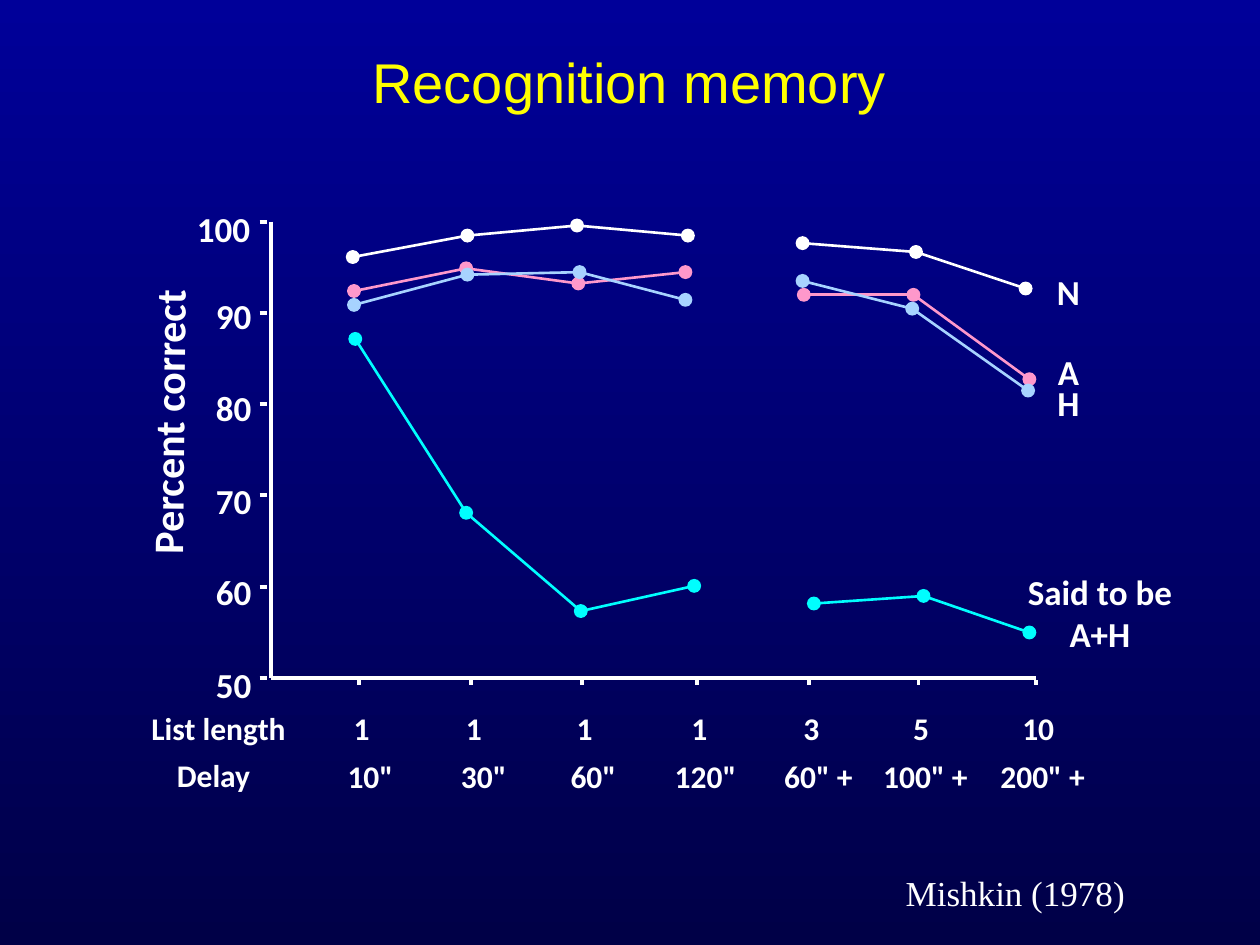
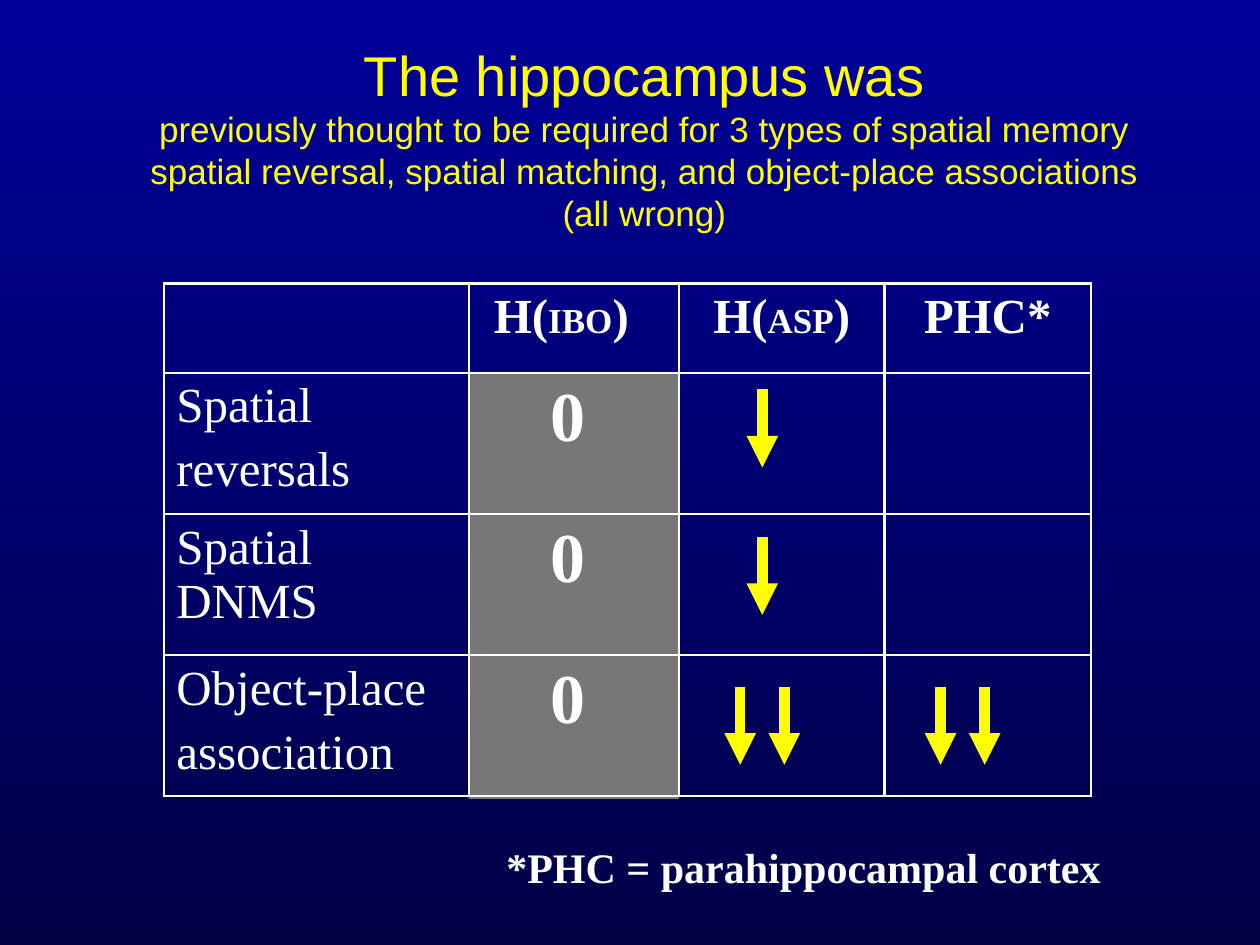
from dataclasses import dataclass, replace
from itertools import pairwise

from lxml import etree
from pptx import Presentation
from pptx.dml.color import RGBColor
from pptx.enum.shapes import MSO_CONNECTOR, MSO_SHAPE
from pptx.enum.text import MSO_ANCHOR, MSO_AUTO_SIZE, PP_ALIGN
from pptx.oxml.ns import qn
from pptx.util import Inches, Pt

STRAIGHT = MSO_CONNECTOR.STRAIGHT
OVAL, RECTANGLE = MSO_SHAPE.OVAL, MSO_SHAPE.RECTANGLE
LEFT, CENTER = PP_ALIGN.LEFT, PP_ALIGN.CENTER
TOP, MIDDLE = MSO_ANCHOR.TOP, MSO_ANCHOR.MIDDLE
FIT_TEXT, FIXED_SIZE = MSO_AUTO_SIZE.SHAPE_TO_FIT_TEXT, MSO_AUTO_SIZE.NONE

WHITE, YELLOW, GREY = "FFFFFF", "FFFF00", "777777"
PINK, PALE_BLUE, CYAN = "FE98CB", "A7D3FF", "00FEFE"
BACKGROUND = ("000099", "000047")


@dataclass(frozen=True)
class Style:
    font: str
    size: float
    color: str = WHITE
    bold: bool = False


TITLE = Style("Arial", 32, YELLOW)
SUBTITLE = replace(TITLE, size=20)
AXIS_TITLE = Style("Calibri", 24, bold=True)
SCALE = replace(AXIS_TITLE, size=20)
CONDITION = replace(AXIS_TITLE, size=18)
CITATION = Style("Times New Roman", 20)
TASK = replace(CITATION, size=28)
HEADING = replace(TASK, bold=True)
SUBHEADING = replace(HEADING, size=20)
FOOTNOTE = replace(HEADING, size=24)
SCORE = replace(HEADING, size=40)


@dataclass(frozen=True)
class Box:
    left: float
    top: float
    width: float
    height: float

    def lengths(self) -> tuple:
        return tuple(Inches(v) for v in (self.left, self.top, self.width, self.height))


@dataclass(frozen=True)
class Trial:
    tick: float
    list_length: str
    delay: str
    delay_left: float
    delay_width: float


@dataclass(frozen=True)
class Group:
    color: str
    points: tuple


@dataclass(frozen=True)
class Label:
    text: str
    box: Box
    style: Style


TRIALS = (
    Trial(2.85, "1", '10"', 2.64, 0.6),
    Trial(3.74, "1", '30"', 3.54, 0.6),
    Trial(4.62, "1", '60"', 4.41, 0.6),
    Trial(5.53, "1", '120"', 5.23, 0.74),
    Trial(6.42, "3", '60" +', 6.09, 0.81),
    Trial(7.29, "5", '100" +', 6.87, 0.95),
    Trial(8.22, "10", '200" +', 7.8, 0.95),
)
FIRST_LONG_LIST = 4  # the curves break before this trial

GROUPS = (
    Group(PINK, ((2.81, 2.31), (3.7, 2.13), (4.59, 2.25), (5.44, 2.16),
                 (6.38, 2.34), (7.25, 2.34), (8.17, 3.01))),
    Group(WHITE, ((2.8, 2.04), (3.71, 1.87), (4.58, 1.79), (5.46, 1.87),
                  (6.37, 1.93), (7.27, 2.0), (8.14, 2.29))),
    Group(CYAN, ((2.82, 2.69), (3.7, 4.07), (4.61, 4.85), (5.51, 4.65),
                 (6.46, 4.79), (7.33, 4.73), (8.17, 5.02))),
    Group(PALE_BLUE, ((2.81, 2.42), (3.71, 2.18), (4.6, 2.16), (5.44, 2.38),
                      (6.37, 2.23), (7.24, 2.45), (8.16, 3.1))),
)
DOT = 0.1

AXIS_X, AXIS_TOP, AXIS_BOTTOM = 2.15, 1.76, 5.38
PERCENT_TOPS = {100: 1.6, 90: 2.29, 80: 3.02, 70: 3.76, 60: 4.48, 50: 5.22}
PLOT_LABELS = (
    Label("List length", Box(1, 5.58, 1.47, 0.4), CONDITION),
    Label("Delay", Box(1.26, 5.95, 0.87, 0.4), CONDITION),
    Label("N", Box(8.28, 2.1, 0.4, 0.43), SCALE),
    Label("A", Box(8.28, 2.73, 0.4, 0.43), SCALE),
    Label("H", Box(8.28, 2.98, 0.4, 0.43), SCALE),
    Label("Said to be\nA+H", Box(8.05, 4.48, 1.36, 0.77), SCALE),
)

COLUMNS, ROWS = (2.42, 1.67, 1.63, 1.64), (0.71, 1.12, 1.12, 1.12)
TABLE = Box(1.3, 2.25, sum(COLUMNS), sum(ROWS))
TASKS = ("Spatial\nreversals", "Spatial DNMS", "Object-place\nassociation")
ARROW_LENGTH, PAIR_OFFSET = 0.62, 0.175


def rgb(color: str) -> RGBColor:
    return RGBColor.from_string(color)


def style_run(run, style: Style) -> None:
    run.font.name = style.font
    run.font.size = Pt(style.size)
    run.font.bold = style.bold
    run.font.color.rgb = rgb(style.color)


def write(frame, text: str, style: Style, align=LEFT, gap: float = 0) -> None:
    """Fill the frame, one paragraph a line, with gap points between paragraphs."""
    frame.text = text
    for index, paragraph in enumerate(frame.paragraphs):
        paragraph.alignment = align
        if index and gap:
            paragraph.space_before = Pt(gap)
        for run in paragraph.runs:
            style_run(run, style)


def add_text(slide, text: str, box: Box, style: Style, align=CENTER,
             wrap: bool = False, anchor=TOP, fit=FIT_TEXT):
    label = slide.shapes.add_textbox(*box.lengths())
    frame = label.text_frame
    frame.word_wrap = wrap
    frame.auto_size = fit
    frame.vertical_anchor = anchor
    write(frame, text, style, align)
    return label


def add_line(slide, start: tuple, end: tuple, color: str, width: float, arrow: bool = False) -> None:
    line = slide.shapes.add_connector(STRAIGHT, *(Inches(v) for v in (*start, *end)))
    line.line.color.rgb = rgb(color)
    line.line.width = Pt(width)
    properties = line.line._get_or_add_ln()
    if arrow:
        etree.SubElement(properties, qn("a:tailEnd"), type="triangle")
    etree.SubElement(properties.getparent(), qn("a:effectLst"))


def add_filled(slide, preset, box: Box, color: str, outlined: bool = False) -> None:
    shape = slide.shapes.add_shape(preset, *box.lengths())
    shape.shadow.inherit = False
    shape.fill.solid()
    shape.fill.fore_color.rgb = rgb(color)
    if outlined:
        shape.line.color.rgb = rgb(color)
        shape.line.width = Pt(0.75)
    else:
        shape.line.fill.background()


def add_slide(deck):
    slide = deck.slides.add_slide(deck.slide_layouts[6])
    fill = slide.background.fill
    fill.gradient()
    fill.gradient_angle = 270
    for stop, color in zip(fill.gradient_stops, BACKGROUND):
        stop.color.rgb = rgb(color)
    return slide


def draw_axes(slide) -> None:
    add_line(slide, (AXIS_X, AXIS_TOP), (AXIS_X, AXIS_BOTTOM), WHITE, 2.25)
    add_line(slide, (AXIS_X, AXIS_BOTTOM), (TRIALS[-1].tick, AXIS_BOTTOM), WHITE, 2.25)

    step = (AXIS_BOTTOM - AXIS_TOP) / (len(PERCENT_TOPS) - 1)
    for index, (percent, top) in enumerate(PERCENT_TOPS.items()):
        y = AXIS_TOP + index * step
        add_line(slide, (2.06, y), (2.12, y), WHITE, 2.25)
        width = 0.67 if percent == 100 else 0.51
        add_text(slide, str(percent), Box(2.11 - width, top, width, 0.43), SCALE)

    for trial in TRIALS:
        add_line(slide, (trial.tick, 5.4), (trial.tick, 5.44), WHITE, 2.25)
        width = 0.2 + 0.14 * len(trial.list_length)
        left = trial.tick + 0.02 - width / 2
        add_text(slide, trial.list_length, Box(left, 5.58, width, 0.4), CONDITION)
        add_text(slide, trial.delay, Box(trial.delay_left, 5.96, trial.delay_width, 0.4), CONDITION)

    axis_title = add_text(slide, "Percent correct", Box(-0.04, 3.1, 2.74, 0.5), AXIS_TITLE)
    axis_title.rotation = 270.5


def draw_group(slide, group: Group) -> None:
    for part in (group.points[:FIRST_LONG_LIST], group.points[FIRST_LONG_LIST:]):
        for start, end in pairwise(part):
            add_line(slide, start, end, group.color, 1.5)
    for x, y in group.points:
        add_filled(slide, OVAL, Box(x - DOT / 2, y - DOT / 2, DOT, DOT), group.color, outlined=True)


def build_recognition(deck) -> None:
    slide = add_slide(deck)
    add_text(slide, "Recognition memory", Box(2.84, 0.33, 4.31, 0.64), TITLE)
    draw_axes(slide)
    for group in GROUPS:
        draw_group(slide, group)
    for label in PLOT_LABELS:
        add_text(slide, label.text, label.box, label.style)
    add_text(slide, "Mishkin (1978)", Box(7.09, 6.87, 2.06, 0.43), CITATION, LEFT, wrap=True)


def outline_cell(cell) -> None:
    properties = cell._tc.get_or_add_tcPr()
    for side in ("lnL", "lnR", "lnT", "lnB"):
        border = etree.SubElement(properties, qn(f"a:{side}"), w=str(Pt(1.5)))
        fill = etree.SubElement(border, qn("a:solidFill"))
        etree.SubElement(fill, qn("a:srgbClr"), val=WHITE)
    cell.fill.background()


def write_lesion_heading(cell, method: str, align) -> None:
    """Write H(method) with the method in smaller letters."""
    paragraph = cell.text_frame.paragraphs[0]
    paragraph.alignment = align
    for text, style in (("H(", HEADING), (method, SUBHEADING), (")", HEADING)):
        run = paragraph.add_run()
        run.text = text
        style_run(run, style)


def draw_lesion_table(slide) -> None:
    table = slide.shapes.add_table(len(ROWS), len(COLUMNS), *TABLE.lengths()).table
    table.first_row = table.horz_banding = False
    for column, width in zip(table.columns, COLUMNS):
        column.width = Inches(width)
    for row, height in zip(table.rows, ROWS):
        row.height = Inches(height)
    for cell in table.iter_cells():
        outline_cell(cell)

    table.cell(0, 1).margin_left = Inches(0.2)
    write_lesion_heading(table.cell(0, 1), "IBO", LEFT)
    write_lesion_heading(table.cell(0, 2), "ASP", CENTER)
    write(table.cell(0, 3).text_frame, "PHC*", HEADING, CENTER)
    for row, task in enumerate(TASKS, start=1):
        write(table.cell(row, 0).text_frame, task, TASK, gap=5.6)
        score = table.cell(row, 1)
        score.margin_left = Inches(0.65)
        write(score.text_frame, "0", SCORE)


def draw_impairment(slide, center: float, top: float, double: bool = False) -> None:
    """Draw one down arrow, or a pair for a strong impairment."""
    for offset in (-PAIR_OFFSET, PAIR_OFFSET) if double else (0,):
        x = center + offset
        add_line(slide, (x, top), (x, top + ARROW_LENGTH), YELLOW, 6, arrow=True)


def build_hippocampus(deck) -> None:
    slide = add_slide(deck)
    add_filled(slide, RECTANGLE, Box(3.72, 2.96, COLUMNS[1], 3.38), GREY)
    draw_lesion_table(slide)
    draw_impairment(slide, 6.05, 3.09)
    draw_impairment(slide, 6.05, 4.26)
    for center in (6.05, 7.64):
        draw_impairment(slide, center, 5.45, double=True)

    title = add_text(
        slide,
        "The hippocampus was\n"
        "previously thought to be required for 3 types of spatial memory\n"
        "spatial reversal, spatial matching, and object-place associations\n"
        "(all wrong)",
        Box(0.98, 0.55, 8.27, 1.08), SUBTITLE, wrap=True, anchor=MIDDLE, fit=FIXED_SIZE)
    style_run(title.text_frame.paragraphs[0].runs[0], TITLE)
    add_text(slide, "*PHC = parahippocampal cortex", Box(3.92, 6.63, 4.92, 0.5), FOOTNOTE, LEFT)


def main() -> None:
    deck = Presentation()
    deck.slide_width, deck.slide_height = Inches(10), Inches(7.5)
    build_recognition(deck)
    build_hippocampus(deck)
    deck.save("out.pptx")


if __name__ == "__main__":
    main()
